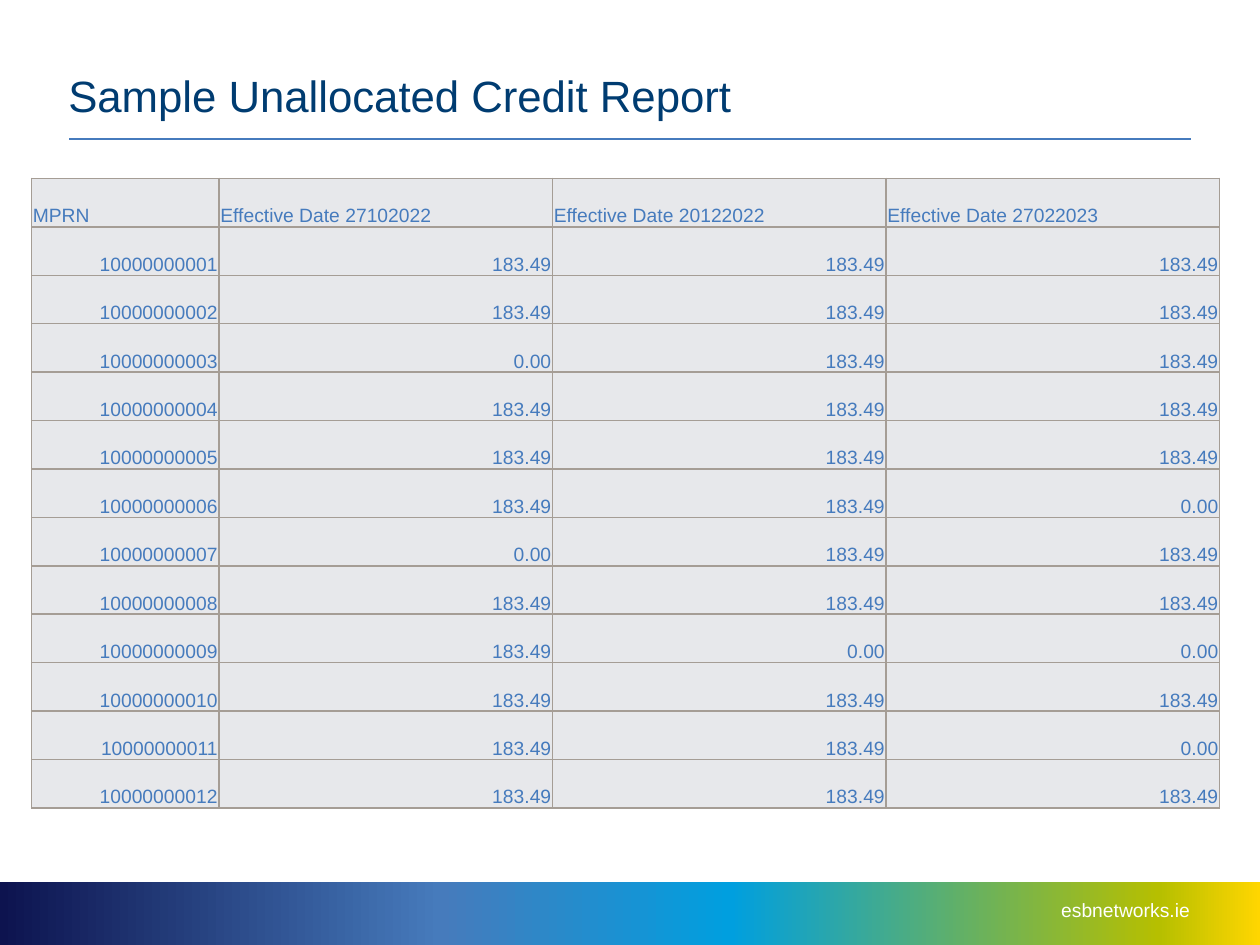
from typing import NamedTuple

from lxml.etree import SubElement
from pptx import Presentation
from pptx.dml.color import RGBColor
from pptx.enum.shapes import MSO_CONNECTOR, MSO_SHAPE
from pptx.enum.text import MSO_ANCHOR, MSO_AUTO_SIZE, PP_ALIGN
from pptx.oxml.ns import qn
from pptx.util import Pt

NAVY = RGBColor(0x00, 0x3C, 0x71)
BLUE = RGBColor(0x46, 0x7B, 0xBD)
WHITE = RGBColor(0xFF, 0xFF, 0xFF)
CELL_GREY = RGBColor(0xE7, 0xE8, 0xEB)
BORDER = RGBColor(0xA5, 0x9D, 0x95)
FONT = "Arial"


class Stop(NamedTuple):
    percent: int
    color: RGBColor


class Credit(NamedTuple):
    mprn: str
    october: str = "183.49"
    december: str = "183.49"
    february: str = "183.49"


BAND_STOPS = [
    Stop(0, RGBColor(0x0D, 0x13, 0x4F)),
    Stop(35, RGBColor(0x46, 0x7B, 0xBC)),
    Stop(58, RGBColor(0x00, 0x9F, 0xDF)),
    Stop(92, RGBColor(0xB6, 0xBF, 0x00)),
    Stop(100, RGBColor(0xFF, 0xD6, 0x00)),
]
HEADER = ("MPRN", "Effective Date 27102022", "Effective Date 20122022", "Effective Date 27022023")
CREDITS = [
    Credit("10000000001"),
    Credit("10000000002"),
    Credit("10000000003", october="0.00"),
    Credit("10000000004"),
    Credit("10000000005"),
    Credit("10000000006", february="0.00"),
    Credit("10000000007", october="0.00"),
    Credit("10000000008"),
    Credit("10000000009", december="0.00", february="0.00"),
    Credit("10000000010"),
    Credit("10000000011", february="0.00"),
    Credit("10000000012"),
]
COLUMN_WIDTHS = (107.2, 190.6, 190.6, 190.6)
TABLE_HEIGHT = 360


def set_font(p, size: float, color: RGBColor) -> None:
    p.font.name = FONT
    p.font.size = Pt(size)
    p.font.color.rgb = color


def add_solid_fill(parent, color: RGBColor) -> None:
    SubElement(SubElement(parent, qn("a:solidFill")), qn("a:srgbClr"), val=str(color))


def add_band(s) -> None:
    band = s.shapes.add_shape(MSO_SHAPE.RECTANGLE, 0, Pt(504), Pt(720), Pt(36))
    band.shadow.inherit = False
    band.line.fill.background()
    band.fill.gradient()
    band.fill.gradient_angle = 0
    stops = band._element.spPr.find(f".//{qn('a:gsLst')}")
    for gs in list(stops):
        stops.remove(gs)
    for stop in BAND_STOPS:
        gs = SubElement(stops, qn("a:gs"), pos=str(stop.percent * 1000))
        SubElement(gs, qn("a:srgbClr"), val=str(stop.color))


def add_web_address(s) -> None:
    tf = s.shapes.add_textbox(Pt(548), Pt(510), Pt(132), Pt(21)).text_frame
    tf.word_wrap = True
    tf.margin_right = 0
    p = tf.paragraphs[0]
    p.text = "esbnetworks.ie"
    p.alignment = PP_ALIGN.RIGHT
    set_font(p, 11, WHITE)


def add_rule(s) -> None:
    rule = s.shapes.add_connector(MSO_CONNECTOR.STRAIGHT, Pt(39.5), Pt(79.3), Pt(680.5), Pt(79.3))
    rule.line.color.rgb = BLUE
    rule.line.width = Pt(1)
    SubElement(rule._element.spPr, qn("a:effectLst"))


def set_title(s) -> None:
    title = s.shapes.title
    title.left, title.top, title.width, title.height = Pt(39), Pt(17.5), Pt(536), Pt(56)
    tf = title.text_frame
    tf.auto_size = MSO_AUTO_SIZE.NONE
    tf.vertical_anchor = MSO_ANCHOR.MIDDLE
    tf.margin_left = tf.margin_right = 0
    p = tf.paragraphs[0]
    p.text = "Sample Unallocated Credit Report"
    p.alignment = PP_ALIGN.LEFT
    p.line_spacing = Pt(48)
    set_font(p, 25, NAVY)


def fill_cell(cell, text: str, alignment: PP_ALIGN) -> None:
    cell.fill.solid()
    cell.fill.fore_color.rgb = CELL_GREY
    cell.vertical_anchor = MSO_ANCHOR.BOTTOM
    cell.margin_left = cell.margin_right = cell.margin_top = Pt(0.75)
    cell.margin_bottom = 0
    p = cell.text_frame.paragraphs[0]
    p.text = text
    p.alignment = alignment
    set_font(p, 11, BLUE)
    tc_pr = cell._tc.get_or_add_tcPr()
    for i, side in enumerate(("a:lnL", "a:lnR", "a:lnT", "a:lnB")):
        ln = SubElement(tc_pr, qn(side), w=str(Pt(1)))
        add_solid_fill(ln, BORDER)
        tc_pr.insert(i, ln)  # borders come before the fill in the schema


def add_credit_table(s) -> None:
    rows = [HEADER, *CREDITS]
    table = s.shapes.add_table(len(rows), len(HEADER), Pt(18), Pt(102),
                               Pt(sum(COLUMN_WIDTHS)), Pt(TABLE_HEIGHT)).table
    table.horz_banding = False
    table.first_row = False
    for column, width in zip(table.columns, COLUMN_WIDTHS):
        column.width = Pt(width)
    for i, row in enumerate(rows):
        table.rows[i].height = Pt(TABLE_HEIGHT / len(rows))
        for j, text in enumerate(row):
            fill_cell(table.cell(i, j), text, PP_ALIGN.RIGHT if i else PP_ALIGN.LEFT)


def main() -> None:
    prs = Presentation()
    prs.slide_width, prs.slide_height = Pt(720), Pt(540)
    s = prs.slides.add_slide(prs.slide_layouts.get_by_name("Title Only"))
    add_band(s)
    add_web_address(s)
    add_rule(s)
    set_title(s)
    add_credit_table(s)
    prs.save("out.pptx")


if __name__ == "__main__":
    main()
